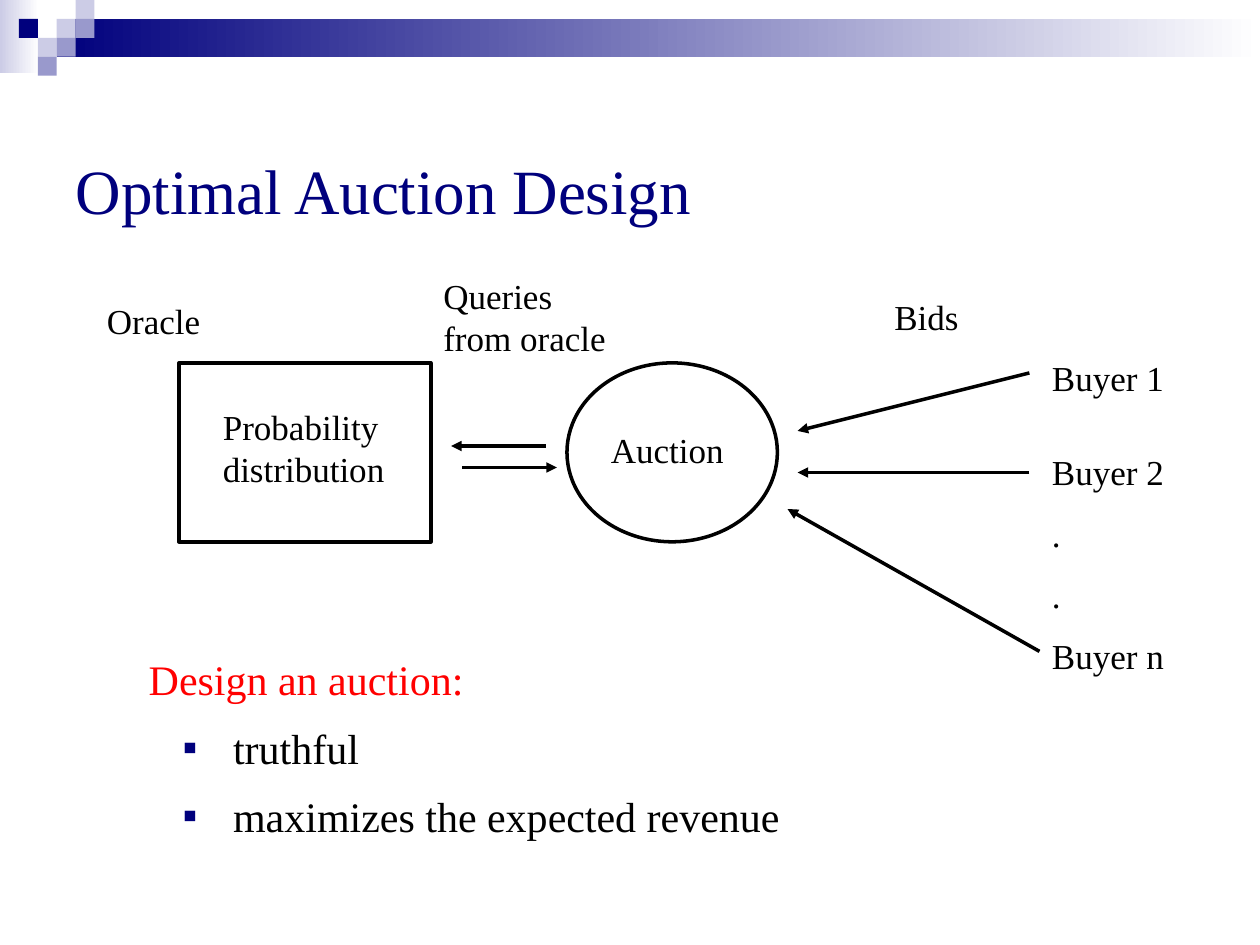
from lxml import etree
from pptx import Presentation
from pptx.dml.color import RGBColor
from pptx.enum.shapes import MSO_CONNECTOR, MSO_SHAPE
from pptx.enum.text import MSO_ANCHOR, MSO_AUTO_SIZE, PP_ALIGN
from pptx.oxml.ns import qn
from pptx.util import Inches, Pt

RECT, OVAL = MSO_SHAPE.RECTANGLE, MSO_SHAPE.OVAL
STRAIGHT = MSO_CONNECTOR.STRAIGHT
FONT = "Times New Roman"
NAVY, LILAC, PALE = "00007D", "9999CC", "CCCCE6"
BLACK, WHITE, RED = "000000", "FFFFFF", "FF0000"

TITLE = "Optimal Auction Design"
GOAL = "Design an auction:"
GOAL_POINTS = ["truthful", "maximizes the expected revenue"]

# left, top, width, height, start colour
BANNERS = [(0, 0, 0.31, 0.58, PALE), (0.45, 0.15, 9.55, 0.3, NAVY)]
TILE = 0.15
# column, row, colour
TILES = [(3, 1, PALE), (4, 0, PALE), (4, 1, LILAC), (2, 2, PALE),
         (1, 1, NAVY), (3, 2, LILAC), (2, 3, LILAC)]

NODES = [(OVAL, 4.5, 2.88, 1.67, 1.42), (RECT, 1.42, 2.88, 2, 1.42)]
# lines of text, left, top, width, height
LABELS = [
    (["Auction"], 4.75, 3.35, 1.2, 0.43),
    (["Probability", "distribution"], 1.67, 3.17, 1.6, 0.77),
    (["Bids"], 7, 2.3, 0.83, 0.43),
    (["Queries", "from oracle"], 3.42, 2.13, 1.5, 0.77),
    (["Oracle"], 0.75, 2.33, 1.5, 0.43),
]
# text, space before in points
BUYERS = [("Buyer 1", 0), ("Buyer 2", 30), (".", 10.9), (".", 10.9), ("Buyer n", 10.9)]
# from x, from y, to x, to y
ARROWS = [
    (4.33, 3.54, 3.58, 3.54), (3.67, 3.71, 4.42, 3.71),
    (8.25, 5.17, 6.25, 4.04), (8.17, 3.75, 6.33, 3.75), (8.17, 2.96, 6.33, 3.42),
]


def rgb(color):
    return RGBColor.from_string(color)


def place(sp, *box):
    sp.left, sp.top, sp.width, sp.height = map(Inches, box)


def add_shape(slide, kind, *box):
    sp = slide.shapes.add_shape(kind, *map(Inches, box))
    sp.shadow.inherit = False
    return sp


def add_run(p, text, size, color=BLACK):
    r = p.add_run()
    r.text = text
    r.font.name, r.font.size = FONT, Pt(size)
    r.font.color.rgb = rgb(color)


def add_text_box(slide, *box):
    tf = slide.shapes.add_textbox(*map(Inches, box)).text_frame
    tf.word_wrap = True
    return tf


def add_arrow(slide, *ends):
    line = slide.shapes.add_connector(STRAIGHT, *map(Inches, ends))
    line.line.color.rgb = rgb(BLACK)
    line.line.width = Pt(2)
    etree.SubElement(line.line._get_or_add_ln(), qn("a:tailEnd"), type="triangle")
    etree.SubElement(line._element.spPr, qn("a:effectLst"))


def set_bullet(p, char=None, margin=0, hang=0):
    """Set the paragraph's indents and a navy bullet, or no bullet without char."""
    pPr = p._p.get_or_add_pPr()
    pPr.set("marL", str(Inches(margin)))
    pPr.set("indent", str(Inches(-hang)))
    if char is None:
        etree.SubElement(pPr, qn("a:buNone"))
        return
    color = etree.SubElement(pPr, qn("a:buClr"))
    etree.SubElement(color, qn("a:srgbClr"), val=NAVY)
    etree.SubElement(pPr, qn("a:buFont"), typeface=FONT)
    etree.SubElement(pPr, qn("a:buChar"), char=char)


def add_header(slide):
    for *box, color in BANNERS:
        sp = add_shape(slide, RECT, *box)
        sp.line.fill.background()
        sp.fill.gradient()
        sp.fill.gradient_angle = 0
        for stop, stop_color in zip(sp.fill.gradient_stops, (color, WHITE)):
            stop.color.rgb = rgb(stop_color)
    for col, row, color in TILES:
        sp = add_shape(slide, RECT, col * TILE, row * TILE, TILE, TILE)
        sp.line.fill.background()
        sp.fill.solid()
        sp.fill.fore_color.rgb = rgb(color)


def fill_placeholders(slide):
    title, body = slide.placeholders
    place(title, 0.5, 0.75, 9, 1.5)
    title.text_frame.vertical_anchor = MSO_ANCHOR.MIDDLE
    p = title.text_frame.paragraphs[0]
    p.alignment = PP_ALIGN.LEFT
    add_run(p, TITLE, 36, NAVY)

    place(body, 1.08, 5.14, 8.75, 1.58)
    tf = body.text_frame
    tf.auto_size = MSO_AUTO_SIZE.NONE
    p = tf.paragraphs[0]
    p.space_before = Pt(0)
    set_bullet(p)
    add_run(p, GOAL, 24, RED)
    for point in GOAL_POINTS:
        p = tf.add_paragraph()
        p.level = 1
        p.space_before = Pt(0)
        p.line_spacing = Pt(39)
        set_bullet(p, "▪", 0.67, 0.4)
        add_run(p, point, 24)


def add_diagram(slide):
    for node in NODES:
        sp = add_shape(slide, *node)
        sp.fill.background()
        sp.line.color.rgb = rgb(BLACK)
        sp.line.width = Pt(2)
    for lines, *box in LABELS:
        p = add_text_box(slide, *box).paragraphs[0]
        for i, text in enumerate(lines):
            if i:
                p.add_line_break()
            add_run(p, text, 20)
    tf = add_text_box(slide, 8.25, 2.78, 1.42, 2.64)
    for i, (text, gap) in enumerate(BUYERS):
        p = tf.add_paragraph() if i else tf.paragraphs[0]
        p.space_before = Pt(gap)
        add_run(p, text, 20)
    for ends in ARROWS:
        add_arrow(slide, *ends)


def main():
    prs = Presentation()
    prs.slide_width, prs.slide_height = Inches(10), Inches(7.5)
    slide = prs.slides.add_slide(prs.slide_layouts[1])
    add_header(slide)
    fill_placeholders(slide)
    add_diagram(slide)
    prs.save("out.pptx")


if __name__ == "__main__":
    main()
